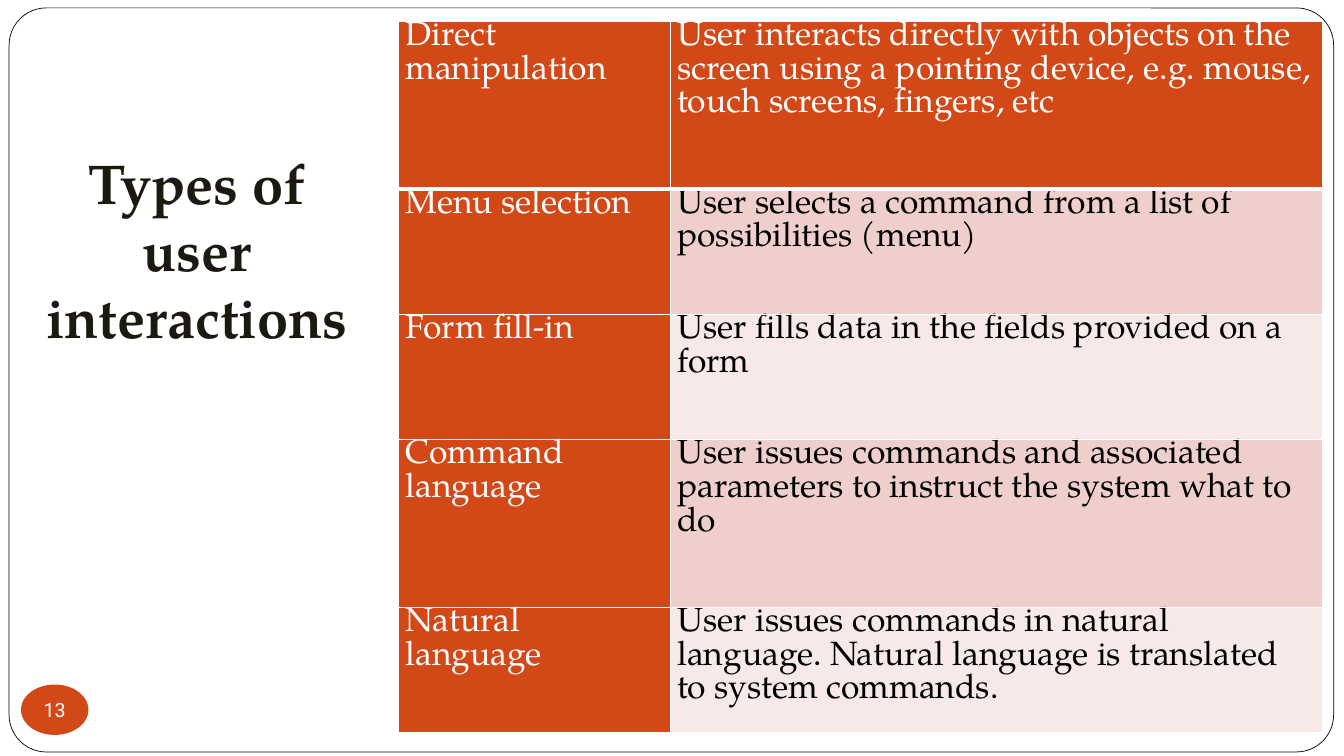
from pptx import Presentation
from pptx.dml.color import RGBColor
from pptx.enum import shapes, text
from pptx.oxml import parse_xml
from pptx.oxml.ns import nsdecls
from pptx.util import Cm, Pt

TITLE = "Types of user interactions"
PAGE_NUMBER = "13"
INTERACTIONS = [
    ("Direct manipulation",
     "User interacts directly with objects on the screen using a pointing device, "
     "e.g. mouse, touch screens, fingers, etc"),
    ("Menu selection", "User selects a command from a list of possibilities (menu)"),
    ("Form fill-in", "User fills data in the fields provided on a form"),
    ("Command language",
     "User issues commands and associated parameters to instruct the system what to do"),
    ("Natural language",
     "User issues commands in natural language. "
     "Natural language is translated to system commands."),
]
COLUMN_WIDTHS = [6.85, 16.43]
ROW_HEIGHTS = [4.22, 3.16, 3.16, 4.22, 3.16]
SERIF, SANS = "TeX Gyre Pagella", "Roboto"
ORANGE, WHITE, BLACK, INK = "D34817", "FFFFFF", "000000", "1C1911"
BANDS = ["F7E9E8", "EFCFCC"]


def color(value):
    return RGBColor.from_string(value)


def paint(target, value):
    target.fill.solid()
    target.fill.fore_color.rgb = color(value)


def write(frame, words, size, ink, font=SERIF, bold=False, align=None, spacing=None):
    paragraph = frame.paragraphs[0]
    paragraph.alignment = align
    paragraph.line_spacing = spacing
    run = paragraph.add_run()
    run.text = words
    run.font.name, run.font.size, run.font.bold = font, Pt(size), bold
    run.font.color.rgb = color(ink)


def set_margins(frame, left, top, right, bottom):
    frame.margin_left, frame.margin_top = Cm(left), Cm(top)
    frame.margin_right, frame.margin_bottom = Cm(right), Cm(bottom)


def add_shape(slide, kind, box, fill):
    shape = slide.shapes.add_shape(kind, *map(Cm, box))
    shape.shadow.inherit = False
    paint(shape, fill)
    shape.line.fill.background()
    return shape


def add_borders(cell, bottom_width):
    """Draw white rules on all four sides of a table cell."""
    properties = cell._tc.get_or_add_tcPr()
    widths = {"lnL": 1, "lnR": 1, "lnT": 1, "lnB": bottom_width}
    for position, (side, width) in enumerate(widths.items()):
        properties.insert(position, parse_xml(
            f'<a:{side} {nsdecls("a")} w="{Pt(width)}"><a:solidFill>'
            f'<a:srgbClr val="{WHITE}"/></a:solidFill></a:{side}>'))


def add_interaction_table(slide):
    table = slide.shapes.add_table(
        len(ROW_HEIGHTS), len(COLUMN_WIDTHS), Cm(10.04), Cm(0.54),
        Cm(sum(COLUMN_WIDTHS)), Cm(sum(ROW_HEIGHTS))).table
    for column, width in zip(table.columns, COLUMN_WIDTHS):
        column.width = Cm(width)
    for r, (height, entry) in enumerate(zip(ROW_HEIGHTS, INTERACTIONS)):
        table.rows[r].height = Cm(height)
        for c, words in enumerate(entry):
            cell = table.cell(r, c)
            strong = r == 0 or c == 0
            paint(cell, ORANGE if strong else BANDS[r % 2])
            set_margins(cell, 0.18, 0, 0.18, 0)
            write(cell.text_frame, words, 24, WHITE if strong else BLACK, spacing=Pt(24))
            add_borders(cell, 3 if r == 0 else 1)


def main():
    presentation = Presentation()
    presentation.slide_width, presentation.slide_height = Cm(33.87), Cm(19.05)
    slide = presentation.slides.add_slide(presentation.slide_layouts[6])

    frame = add_shape(slide, shapes.MSO_SHAPE.ROUNDED_RECTANGLE,
                      (0.23, 0.2, 33.38, 18.75), WHITE)
    frame.adjustments[0] = 0.05
    frame.line.color.rgb = color(BLACK)
    frame.line.width = Pt(0.5)

    title = slide.shapes.add_textbox(*map(Cm, (0.53, 1.37, 8.86, 7.7))).text_frame
    title.word_wrap = True
    title.vertical_anchor = text.MSO_ANCHOR.BOTTOM
    set_margins(title, 0.25, 0.13, 0.25, 0.25)
    write(title, TITLE, 40, INK, bold=True, align=text.PP_ALIGN.CENTER)

    badge = add_shape(slide, shapes.MSO_SHAPE.OVAL, (0.53, 17.25, 1.7, 1.27), ORANGE).text_frame
    badge.word_wrap = False
    badge.vertical_anchor = text.MSO_ANCHOR.MIDDLE
    set_margins(badge, 0, 0, 0, 0)
    write(badge, PAGE_NUMBER, 14, WHITE, font=SANS, align=text.PP_ALIGN.CENTER)

    add_interaction_table(slide)
    presentation.save("out.pptx")


if __name__ == "__main__":
    main()
